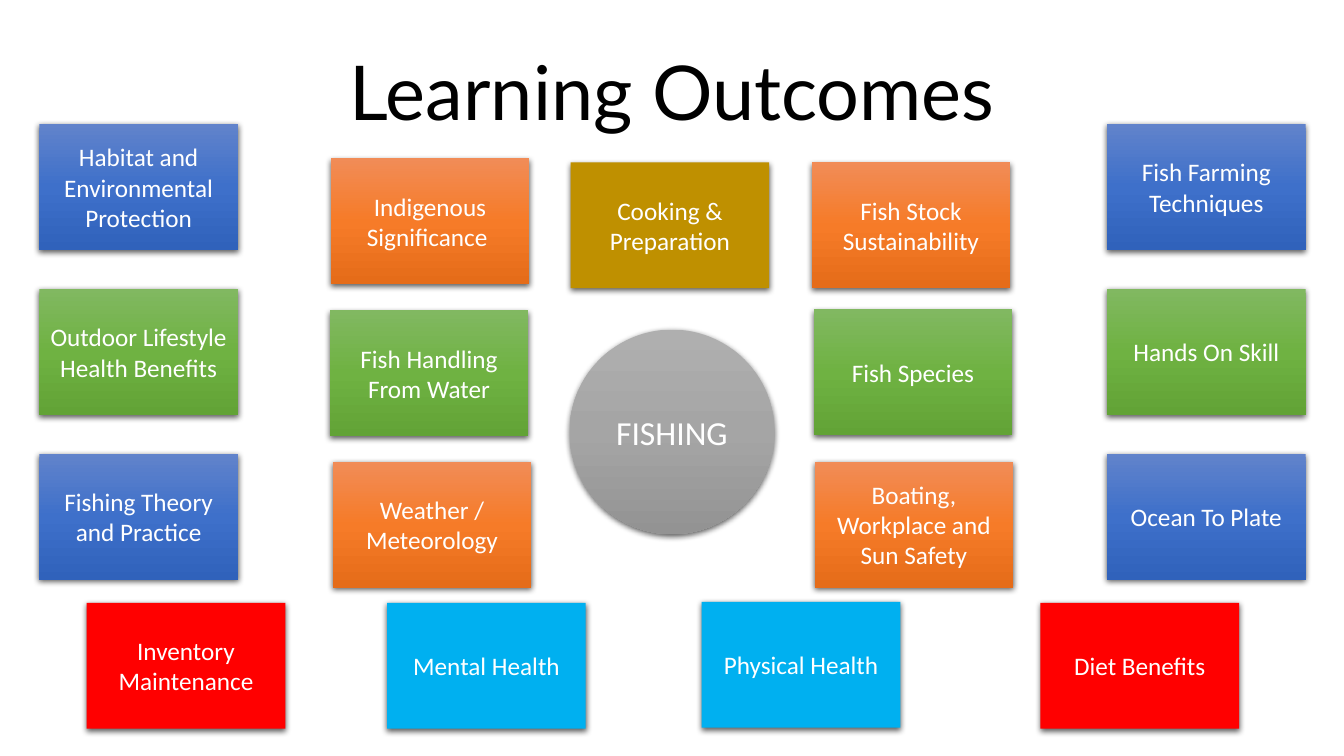
import lxml.etree
import copy
import pptx
import pptx.dml.color
import pptx.enum.shapes
import pptx.enum.text
import pptx.oxml.ns
import pptx.util

COLUMNS, ROWS = 133.3, 75
BOX_WIDTH, BOX_HEIGHT = 19.7, 12.5

BLUE = ["6183CB", "3E70CA", "3062BB"]
GREEN = ["81B861", "6FB242", "62A336"]
ORANGE = ["F18C57", "F67B28", "E56C19"]
GREY = ["AFAFAF", "A5A5A5", "939393"]
GOLD, RED, CYAN = ["BF9000"], ["FF0000"], ["00B0F0"]

OUTER_LEFTS, OUTER_TOP, OUTER_STEP = (3.9, 109.8), 12.3, 16.35
OUTER_ROWS = [
    (BLUE, "Habitat and Environmental Protection", "Fish Farming\nTechniques"),
    (GREEN, "Outdoor Lifestyle Health Benefits", "Hands On Skill"),
    (BLUE, "Fishing Theory and Practice", "Ocean To Plate"),
]
INNER_BOXES = [
    (32.8, 15.7, ORANGE, "Indigenous\nSignificance "),
    (56.6, 16.1, GOLD, "Cooking & Preparation"),
    (80.5, 16.1, ORANGE, "Fish Stock\nSustainability"),
    (32.7, 30.8, GREEN, "Fish Handling From Water"),
    (80.7, 30.7, GREEN, "Fish Species"),
    (33, 45.8, ORANGE, "Weather / Meteorology"),
    (80.8, 45.8, ORANGE, "Boating, Workplace and Sun Safety"),
]
BOTTOM_BOXES = [
    (8.6, 59.8, RED, "Inventory Maintenance"),
    (38.4, 59.8, CYAN, "Mental Health"),
    (69.6, 59.7, CYAN, "Physical Health"),
    (103.2, 59.8, RED, "Diet Benefits"),
]


def rgb(value):
    """Turn a hex string into a colour."""
    return pptx.dml.color.RGBColor.from_string(value)


class Board:
    """Hold the style and the current slide, measured on a fine grid."""

    def __init__(self, deck):
        """Add a blank slide to the deck."""
        self.column = deck.slide_width / COLUMNS
        self.row = deck.slide_height / ROWS
        self.shapes = deck.slides.add_slide(deck.slide_layouts[6]).shapes

    def place(self, left, top, width, height):
        """Convert grid units to slide lengths."""
        return (round(left * self.column), round(top * self.row),
                round(width * self.column), round(height * self.row))

    def label(self, shape, text, size, font, color):
        """Set centred text in one style."""
        frame = shape.text_frame
        frame.word_wrap = True
        frame.text = text
        for para in frame.paragraphs:
            para.alignment = pptx.enum.text.PP_ALIGN.CENTER
            for span in para.runs:
                span.font.size = pptx.util.Pt(size)
                span.font.name = font
                span.font.color.rgb = rgb(color)

    def paint(self, shape, colors):
        """Fill with one colour or an even top-down gradient."""
        if len(colors) == 1:
            shape.fill.solid()
            shape.fill.fore_color.rgb = rgb(colors[0])
            return
        shape.fill.gradient()
        shape.fill.gradient_angle = 270
        stops = next(shape.element.spPr.iter(pptx.oxml.ns.qn("a:gsLst")))
        while len(stops) < len(colors):
            stops.append(copy.deepcopy(stops[0]))
        for index, stop in enumerate(shape.fill.gradient_stops):
            stop.position = index / (len(colors) - 1)
            stop.color.rgb = rgb(colors[index])

    def cast_shadow(self, shape):
        """Add a soft shadow below the shape."""
        qn = pptx.oxml.ns.qn
        shape.shadow.inherit = False
        effects = shape.element.spPr.find(qn("a:effectLst"))
        shadow = lxml.etree.SubElement(
            effects, qn("a:outerShdw"), blurRad=str(pptx.util.Pt(4.5)),
            dist=str(pptx.util.Pt(1.5)), dir="5400000", algn="ctr", rotWithShape="0")
        color = lxml.etree.SubElement(shadow, qn("a:srgbClr"), val="000000")
        lxml.etree.SubElement(color, qn("a:alpha"), val="63000")

    def title(self, text):
        """Add the heading across the slide."""
        heading = self.shapes.add_textbox(*self.place(0, 4, COLUMNS, 10.1))
        self.label(heading, text, 54, "Lato", "000000")

    def tile(self, kind, area, colors, text, size):
        """Add a shaded shape with a white label."""
        shape = self.shapes.add_shape(kind, *self.place(*area))
        self.paint(shape, colors)
        shape.line.fill.background()
        self.cast_shadow(shape)
        shape.text_frame.vertical_anchor = pptx.enum.text.MSO_ANCHOR.MIDDLE
        self.label(shape, text, size, "Calibri", "FFFFFF")

    def box(self, left, top, colors, text):
        """Add an outcome box of the common size."""
        self.tile(pptx.enum.shapes.MSO_SHAPE.RECTANGLE,
                  (left, top, BOX_WIDTH, BOX_HEIGHT), colors, text, 18)

    def hub(self, text):
        """Add the central circle."""
        self.tile(pptx.enum.shapes.MSO_SHAPE.OVAL,
                  (56.5, 32.7, 20.3, 20.3), GREY, text, 24)


def main():
    """Build and save the slide."""
    deck = pptx.Presentation()
    deck.slide_width = pptx.util.Inches(13.33)
    deck.slide_height = pptx.util.Inches(7.5)
    board = Board(deck)
    board.title("Learning Outcomes")
    board.hub("FISHING")
    for index, (colors, *outcomes) in enumerate(OUTER_ROWS):
        for left, outcome in zip(OUTER_LEFTS, outcomes):
            board.box(left, OUTER_TOP + index * OUTER_STEP, colors, outcome)
    for details in INNER_BOXES + BOTTOM_BOXES:
        board.box(*details)
    deck.save("out.pptx")


if __name__ == "__main__":
    main()
